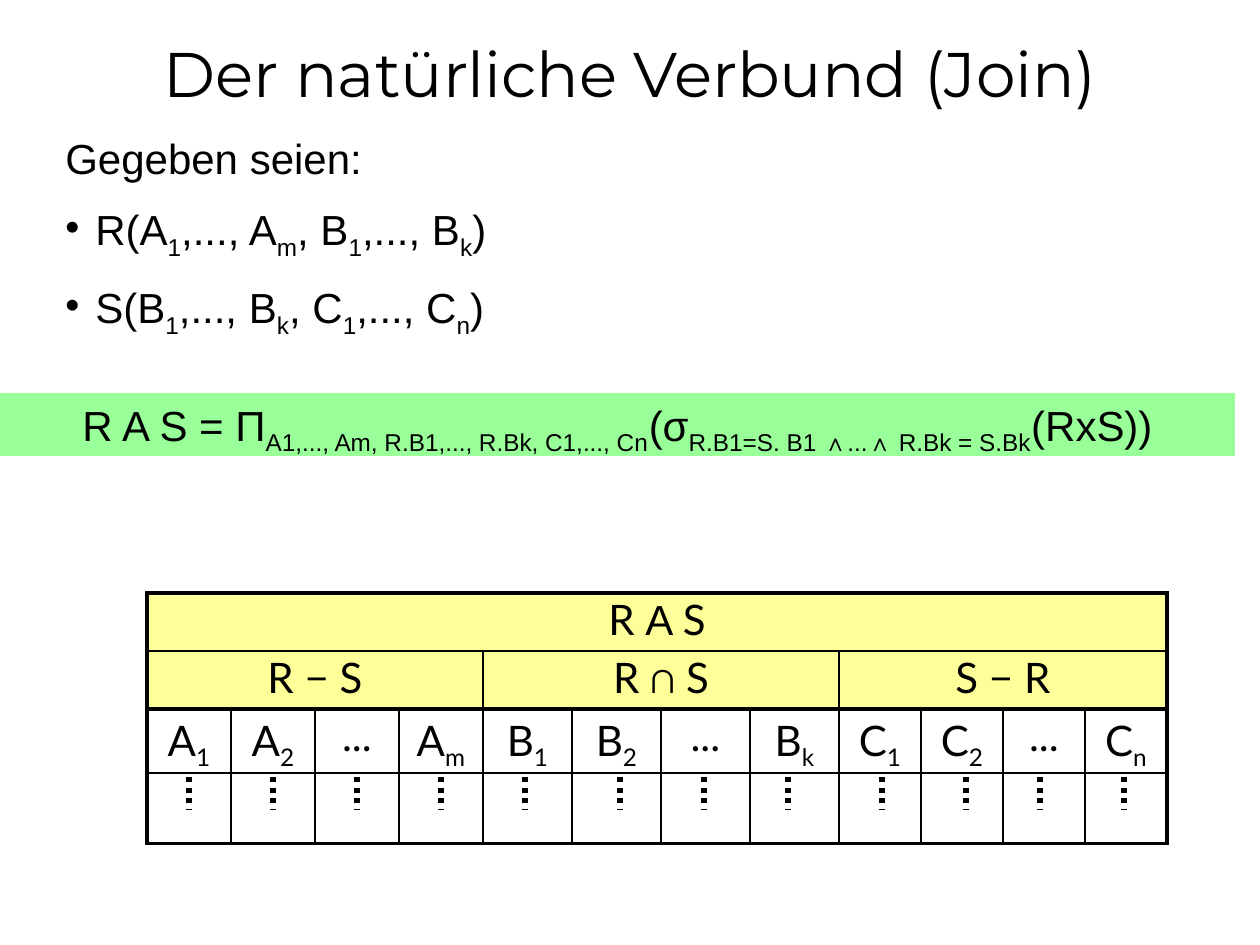
"""Build a slide on the natural join with its formula and schema table."""
from lxml.etree import SubElement
from pptx import Presentation
from pptx.dml.color import RGBColor
from pptx.enum.dml import MSO_LINE
from pptx.enum.shapes import MSO_CONNECTOR, MSO_SHAPE
from pptx.enum.text import MSO_ANCHOR, PP_ALIGN
from pptx.oxml.ns import qn
from pptx.util import Emu, Pt

SCALE = 914400 / 126
HEX = {"ink": "000000", "band": "99FF99", "head": "FFFF99"}


def px(num):
    return Emu(round(num * SCALE))


def tint(name):
    return RGBColor.from_string(HEX[name])


class Deck:
    def __init__(self):
        self.show = Presentation()
        self.show.slide_width, self.show.slide_height = px(1260), px(945)
        self.slide = self.show.slides.add_slide(self.show.slide_layouts[6])
        self.shapes = self.slide.shapes

    def put(self, para, text, font="Arial", size=24):
        for num, part in enumerate(text.split("|")):
            if not part:
                continue
            run = para.add_run()
            run.text = part
            run.font.name, run.font.size = font, Pt(size)
            run.font.color.rgb = tint("ink")
            if num % 2:
                run._r.get_or_add_rPr().set("baseline", "-25000")

    def box(self, left, top, wide, high, anchor=MSO_ANCHOR.TOP):
        frame = self.shapes.add_textbox(px(left), px(top), px(wide), px(high)).text_frame
        frame.word_wrap, frame.vertical_anchor = True, anchor
        return frame

    def title(self, text):
        para = self.box(0, -42, 1260, 158, MSO_ANCHOR.BOTTOM).paragraphs[0]
        para.alignment = PP_ALIGN.CENTER
        self.put(para, text, "Montserrat", 36)

    def points(self, intro, items):
        frame = self.box(53, 126, 693, 214)
        self.put(frame.paragraphs[0], intro)
        for item in items:
            para = frame.add_paragraph()
            para.space_before = Pt(12)
            props = para._p.get_or_add_pPr()
            props.set("marL", str(px(30)))
            props.set("indent", str(-px(30)))
            SubElement(props, qn("a:buChar")).set("char", "•")
            self.put(para, item)

    def band(self, text):
        shape = self.shapes.add_shape(MSO_SHAPE.RECTANGLE, 0, px(393), px(1235), px(63))
        shape.shadow.inherit = False
        shape.fill.solid()
        shape.fill.fore_color.rgb = tint("band")
        shape.line.fill.background()
        frame = shape.text_frame
        frame.word_wrap, frame.vertical_anchor = True, MSO_ANCHOR.TOP
        para = frame.paragraphs[0]
        para.alignment = PP_ALIGN.CENTER
        self.put(para, text)

    def edge(self, cell, thick):
        props = cell._tc.get_or_add_tcPr()
        for num, (side, bold) in enumerate(zip("LRTB", thick)):
            line = props.makeelement(qn(f"a:ln{side}"), {"w": str(Pt(2.25 if bold else 1))})
            fill = SubElement(line, qn("a:solidFill"))
            SubElement(fill, qn("a:srgbClr")).set("val", HEX["ink"])
            props.insert(num, line)

    def table(self, left, top, cols, rows, texts):
        grid = self.shapes.add_table(
            len(rows), len(cols), px(left), px(top), px(sum(cols)), px(sum(rows))).table
        grid.first_row = grid.horz_banding = False
        for col, wide in zip(grid.columns, cols):
            col.width = px(wide)
        for row, (high, line) in enumerate(zip(rows, texts)):
            grid.rows[row].height = px(high)
            span = len(cols) // len(line)
            for num, runs in enumerate(line):
                col = num * span
                cell = grid.cell(row, col)
                if span > 1:
                    cell.merge(grid.cell(row, col + span - 1))
                    cell.fill.solid()
                    cell.fill.fore_color.rgb = tint("head")
                else:
                    cell.fill.background()
                cell.margin_left = cell.margin_right = 0
                self.edge(cell, (col == 0, col + span == len(cols),
                                 row in (0, 2), row in (1, len(rows) - 1)))
                para = cell.text_frame.paragraphs[0]
                para.alignment, para.line_spacing = PP_ALIGN.CENTER, 0.9
                for text, font in runs:
                    self.put(para, text, font)

    def dots(self, left, top, end):
        line = self.shapes.add_connector(
            MSO_CONNECTOR.STRAIGHT, px(left), px(top), px(left), px(end))
        line.line.color.rgb = tint("ink")
        line.line.width = Pt(3)
        line.line.dash_style = MSO_LINE.ROUND_DOT
        SubElement(line._element.spPr, qn("a:effectLst"))


def main():
    deck = Deck()
    deck.title("Der natürliche Verbund (Join)")
    deck.points("Gegeben seien:", ["R(A|1|,..., A|m|, B|1|,..., B|k|)",
                                   "S(B|1|,..., B|k|, C|1|,..., C|n|)"])
    deck.band("R A S = Π|A1,..., Am, R.B1,..., R.Bk, C1,..., Cn|"
              "(σ|R.B1=S. B1 ∧...∧ R.Bk = S.Bk|(RxS))")
    join = [("R ", "Lato"), ("A ", "Arial"), ("S", "Lato")]
    parts = [[(text, "Lato")] for text in ("R − S", "R ∩ S", "S − R")]
    names = [[(text, "Lato")] for name, last in ("Am", "Bk", "Cn")
             for text in (f"{name}|1", f"{name}|2", "...", f"{name}|{last}")]
    cols = [84] * 4 + [89] * 4 + [82] * 4
    deck.table(147, 593, cols, [58, 58, 64, 70], [[join], parts, names, [[]] * len(cols)])
    for start, count in ((189, 5), (620, 3), (882, 2), (1040, 2)):
        for num in range(count):
            deck.dots(start + 84 * num, 777, 809)
    deck.show.save("out.pptx")


if __name__ == "__main__":
    main()
